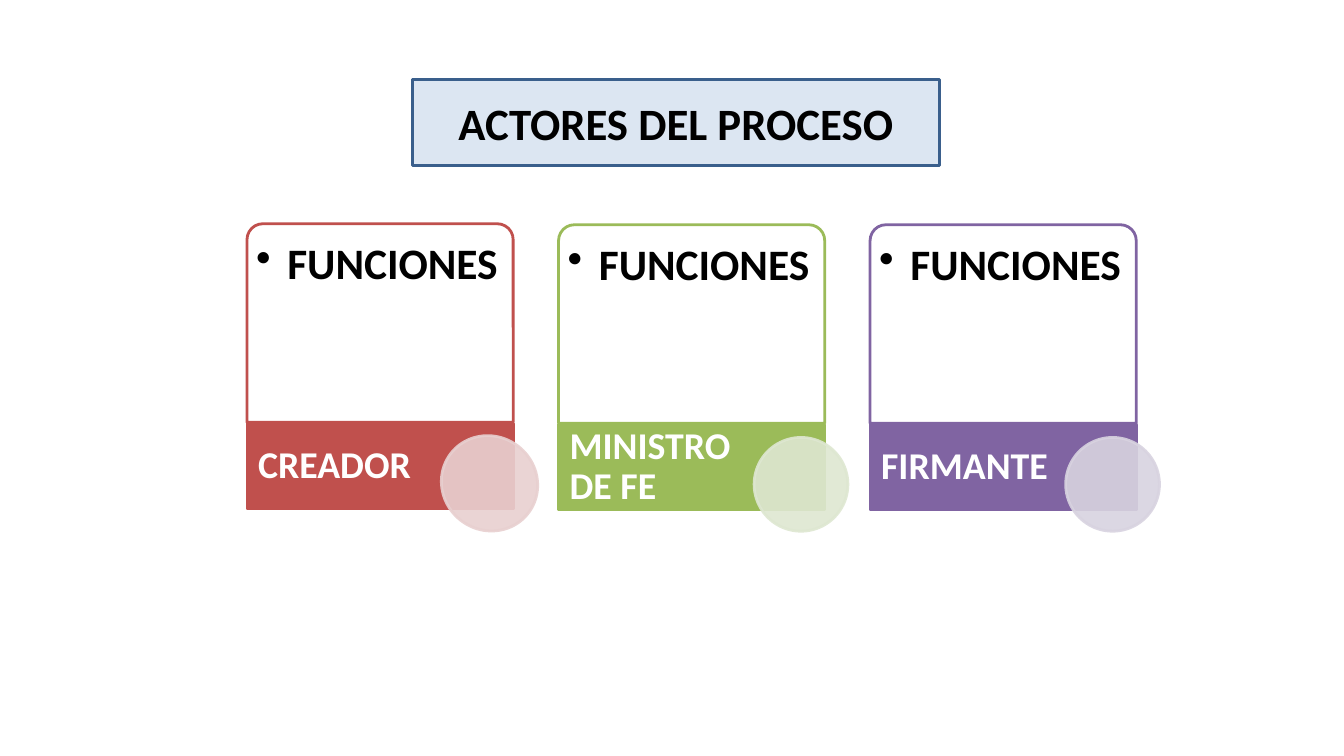
from dataclasses import dataclass

from lxml import etree
from pptx import Presentation
from pptx.dml.color import RGBColor
from pptx.enum.shapes import MSO_SHAPE
from pptx.enum.text import MSO_ANCHOR, PP_ALIGN
from pptx.oxml.ns import qn
from pptx.util import Inches, Pt

RECT = MSO_SHAPE.RECTANGLE
ROUND = MSO_SHAPE.ROUND_2_SAME_RECTANGLE
OVAL = MSO_SHAPE.OVAL
TOP, MIDDLE = MSO_ANCHOR.TOP, MSO_ANCHOR.MIDDLE
CENTER = PP_ALIGN.CENTER


@dataclass(frozen=True)
class Theme:
    font: str = "Calibri"
    black: str = "000000"
    white: str = "FFFFFF"
    pale: str = "DCE6F2"
    navy: str = "3A5F8C"
    title: int = 32
    body: int = 31
    label: int = 27
    line: int = 2
    alpha: int = 90


THEME = Theme()

# Label, main colour, circle tint
ACTORS = [
    ("CREADOR", "C0504D", "E8D0D0"),
    ("MINISTRO DE FE", "9BBB59", "DEE7D1"),
    ("FIRMANTE", "8064A2", "D8D3E0"),
]
LEFT, STEP = 2.45, 3.09
WIDTH, HIGH, BAND = 2.64, 1.97, 0.85


def fade(fill):
    """Make a solid fill slightly transparent."""
    color = fill._xPr.find(qn("a:solidFill"))[0]
    etree.SubElement(color, qn("a:alpha"), val=str(THEME.alpha * 1000))


def add_box(shapes, kind, at, fill, line):
    box = shapes.add_shape(kind, *map(Inches, at))
    box.shadow.inherit = False
    box.fill.solid()
    box.fill.fore_color.rgb = RGBColor.from_string(fill)
    box.line.color.rgb = RGBColor.from_string(line)
    box.line.width = Pt(THEME.line)
    return box


def set_text(box, text, size, color, anchor):
    frame = box.text_frame
    frame.text = text
    frame.word_wrap = True
    frame.vertical_anchor = anchor
    par = frame.paragraphs[0]
    font = par.runs[0].font
    font.name, font.size, font.bold = THEME.font, Pt(size), True
    font.color.rgb = RGBColor.from_string(color)
    return par


def add_text(shapes, at, text, size, color, anchor, inset):
    box = shapes.add_textbox(*map(Inches, at))
    par = set_text(box, text, size, color, anchor)
    par.line_spacing = 0.9
    frame = box.text_frame
    (frame.margin_left, frame.margin_top,
     frame.margin_right, frame.margin_bottom) = map(Inches, inset)
    return par


def add_bullet(par, indent):
    props = par._p.get_or_add_pPr()
    props.set("marL", str(Inches(indent)))
    props.set("indent", str(-Inches(indent)))
    etree.SubElement(props, qn("a:buChar"), char="•")


def add_card(shapes, left, top, label, color, tint):
    # Upper panel with its bullet
    panel = add_box(shapes, ROUND, (left, top, WIDTH, HIGH), THEME.white, color)
    panel.adjustments[0] = 0.08
    fade(panel.fill)
    par = add_text(shapes, (left + 0.05, top + 0.05, 2.55, 1.93), "FUNCIONES",
                   THEME.body, THEME.black, TOP, (0.04, 0.13, 0.04, 0.04))
    add_bullet(par, 0.31)

    # Name band
    base = top + HIGH + 0.01
    add_box(shapes, RECT, (left, base, WIDTH, BAND), color, color)
    add_text(shapes, (left, base, 1.86, BAND), label,
             THEME.label, THEME.white, MIDDLE, (0.11, 0, 0.04, 0))

    # Circle
    disc = add_box(shapes, OVAL, (left + 1.94, top + 2.11, 0.93, 0.93), tint, tint)
    fade(disc.fill)
    fade(disc.line.fill)
    return disc


def main():
    deck = Presentation()
    deck.slide_width, deck.slide_height = Inches(13.33), Inches(7.5)
    slide = deck.slides.add_slide(deck.slide_layouts[6])

    # Actor cards
    cards = slide.shapes.add_group_shape().shapes
    for i, actor in enumerate(ACTORS):
        top = 2.23 if i else 2.22
        disc = add_card(cards, LEFT + i * STEP, top, *actor)
        if i == 0:
            # The first circle is slightly taller and turned
            disc.top, disc.height = Inches(4.31), Inches(0.97)
            disc.rotation = 128.2

    # Title
    title = add_box(slide.shapes, RECT, (4.09, 0.79, 5.23, 0.85),
                    THEME.pale, THEME.navy)
    par = set_text(title, "ACTORES DEL PROCESO", THEME.title, THEME.black, MIDDLE)
    par.alignment = CENTER

    deck.save("out.pptx")


if __name__ == "__main__":
    main()
